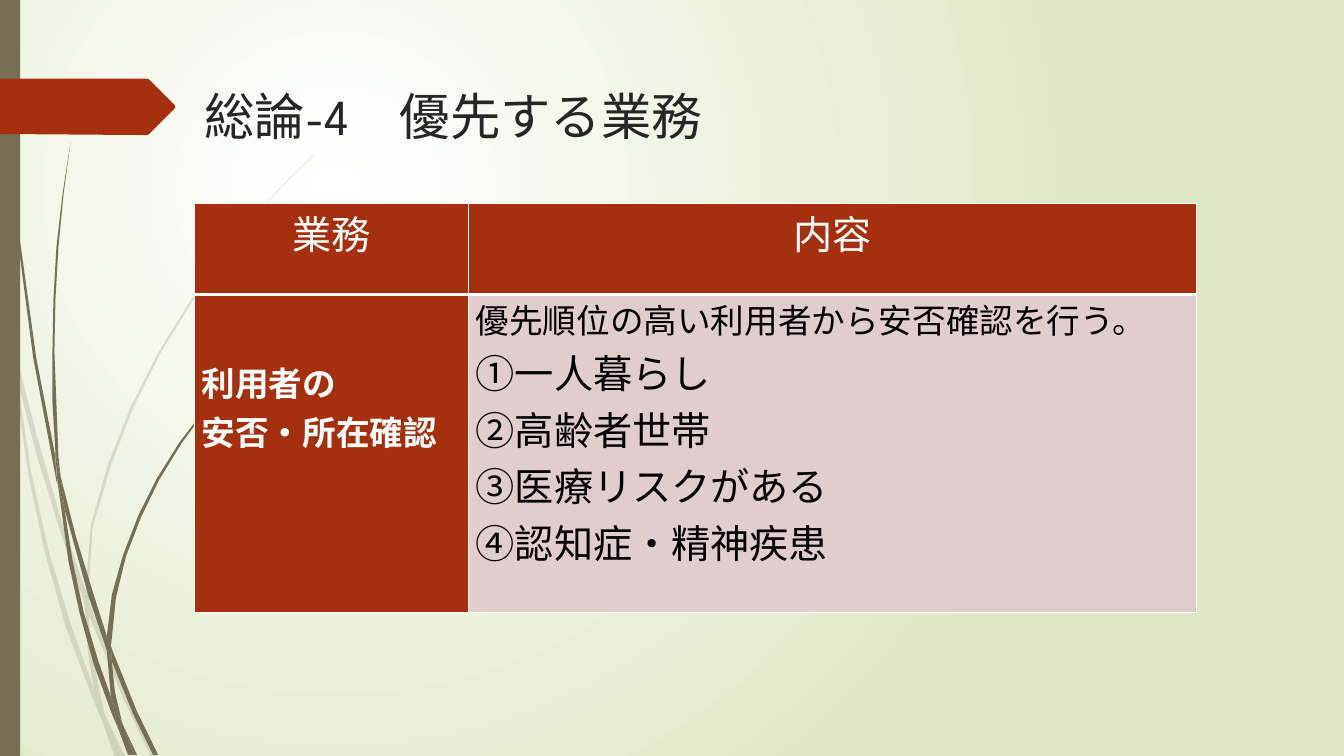
from pptx import Presentation
from pptx.dml.color import RGBColor as RGB
from pptx.enum.shapes import MSO_SHAPE as SHAPE
from pptx.enum.text import PP_ALIGN as ALIGN
from pptx.oxml import parse_xml as to_xml
from pptx.oxml.ns import nsdecls as ns, qn
from pptx.util import Pt
from lxml.etree import SubElement as Sub

WHITE = RGB(0xFF, 0xFF, 0xFF)
BLACK = RGB(0, 0, 0)
INK = RGB(0x26, 0x26, 0x26)
OLIVE = RGB(0x76, 0x6F, 0x54)
RUST = RGB(0xA5, 0x30, 0x10)
PINK = RGB(0xE1, 0xCD, 0xCC)
LIME = RGB(0xDF, 0xE8, 0xC4)
FONT = "League Spartan"
UNIT = Pt(0.72)

PALE = [
    [(11, 350), (9, 322), (0, 282), (0, 299), (10, 344)],
    [(58, 522), (84, 599), (85, 586), (62, 520), (37, 434), (14, 345),
     (17, 376), (36, 450)],
    [(92, 607), (88, 596), (88, 610), (123, 694), (150, 751), (155, 751),
     (127, 692)],
    [(119, 751), (124, 751), (105, 711)],
    [(93, 683), (70, 619), (48, 545), (31, 469), (17, 376), (11, 350),
     (28, 470), (44, 546), (65, 621), (92, 693), (101, 714), (99, 707)],
    [(84, 599), (87, 646), (93, 683), (96, 692), (105, 711), (103, 706),
     (91, 646), (88, 610), (88, 608)],
    [(88, 584), (92, 523), (110, 462), (132, 405), (160, 349), (193, 296),
     (229, 245), (268, 198), (290, 175), (312, 154), (312, 153), (289, 175),
     (268, 197), (228, 244), (191, 295), (158, 348), (130, 403), (107, 461),
     (90, 522), (85, 584), (85, 586), (88, 596)],
    [(101, 714), (114, 751), (119, 751)],
    [(88, 608), (88, 596), (85, 586), (84, 599)],
    [(96, 692), (93, 683), (99, 707), (101, 714), (119, 751), (105, 711)],
]
DARK = [
    [(7, 110), (17, 233), (33, 355), (56, 477), (57, 481), (55, 457),
     (55, 453), (36, 355), (19, 232), (8, 109), (5, 48), (4, 0), (3, 0),
     (4, 48)],
    [(88, 592), (106, 645), (106, 631), (93, 590), (75, 531), (60, 472),
     (64, 505)],
    [(113, 649), (110, 641), (111, 656), (132, 708), (152, 749), (157, 749),
     (136, 706)],
    [(110, 691), (98, 657), (83, 607), (72, 556), (64, 505), (57, 477),
     (68, 557), (79, 608), (93, 659), (111, 708), (117, 722), (116, 717)],
    [(60, 472), (58, 453), (54, 349), (55, 297), (58, 245), (63, 193),
     (70, 141), (62, 193), (56, 245), (53, 297), (52, 349), (52, 399),
     (55, 449)],
    [(133, 749), (136, 749), (122, 719)],
    [(57, 477), (64, 505), (60, 472), (55, 449), (55, 453)],
    [(111, 633), (115, 593), (125, 552), (140, 513), (158, 476), (180, 440),
     (205, 406), (231, 374), (261, 344), (260, 344), (231, 373), (204, 405),
     (178, 439), (156, 474), (137, 512), (122, 551), (111, 590), (106, 631),
     (110, 641)],
    [(117, 722), (127, 749), (131, 749)],
    [(106, 645), (110, 691), (116, 706), (122, 719), (121, 716), (114, 686),
     (111, 656), (109, 651)],
    [(106, 645), (109, 651), (111, 656), (110, 641), (106, 631)],
    [(116, 706), (110, 691), (116, 717), (117, 722), (130, 749), (133, 749),
     (122, 719)],
]
ARROW = [(0, 78), (146, 78), (148, 79), (173, 104), (174, 106), (173, 108),
         (148, 133), (146, 134), (136, 134), (0, 133)]

CELLS = [
    [("業務", 28, RUST, ALIGN.CENTER, 0),
     ("内容", 28, RUST, ALIGN.CENTER, 0)],
    [("利用者の\n安否・所在確認", 24, RUST, ALIGN.JUSTIFY, 45),
     ("優先順位の高い利用者から安否確認を行う。", 24, PINK, ALIGN.LEFT, 0)],
]
RISKS = ["①一人暮らし", "②高齢者世帯", "③医療リスクがある", "④認知症・精神疾患"]


def write(para, text, size, color=WHITE, bold=False, align=ALIGN.LEFT):
    para.alignment = align
    run = para.add_run()
    run.text = text
    font = run.font
    font.name, font.size, font.bold = FONT, Pt(size), bold
    font.color.rgb = color


def paint(shape, color, alpha=None):
    shape.shadow.inherit = False
    shape.fill.solid()
    shape.fill.fore_color.rgb = color
    shape.line.fill.background()
    if alpha:
        tint = shape.fill._xPr.find(".//" + qn("a:srgbClr"))
        Sub(tint, qn("a:alpha"), val=str(alpha * 1000))


def trace(shapes, points, color, alpha=None):
    pen = shapes.build_freeform(*points[0], scale=UNIT)
    pen.add_line_segments(points[1:], close=True)
    paint(pen.convert_to_shape(), color, alpha)


def backdrop(slide):
    slide._element.cSld.insert(0, to_xml(
        f'<p:bg {ns("p", "a")}><p:bgPr><a:gradFill rotWithShape="1"><a:gsLst>'
        f'<a:gs pos="0"><a:srgbClr val="{WHITE}"/></a:gs>'
        f'<a:gs pos="100000"><a:srgbClr val="{LIME}"/></a:gs></a:gsLst>'
        '<a:path path="circle"><a:fillToRect l="50000" t="50000" r="100000" '
        'b="100000"/></a:path></a:gradFill><a:effectLst/></p:bgPr></p:bg>'))


def edge(slide, x, y, w, h):
    for blades, alpha in ((PALE, 20), (DARK, None)):
        group = slide.shapes.add_group_shape()
        for blade in blades:
            trace(group.shapes, blade, OLIVE, alpha)
    bar = slide.shapes.add_shape(SHAPE.RECTANGLE, Pt(x), Pt(y), Pt(w), Pt(h))
    paint(bar, OLIVE)
    trace(slide.shapes, ARROW, RUST)


def title(slide, x, y, w, h):
    frame = slide.shapes.add_textbox(Pt(x), Pt(y), Pt(w), Pt(h)).text_frame
    frame.word_wrap = True
    write(frame.paragraphs[0], "総論-4\u3000優先する業務", 36, INK)


def border(cell, top, base):
    props = cell._tc.get_or_add_tcPr()
    for side, width in (("L", 1), ("R", 1), ("T", top), ("B", base)):
        line = Sub(props, qn("a:ln" + side), w=str(Pt(width)))
        fill = Sub(line, qn("a:solidFill"))
        Sub(fill, qn("a:srgbClr"), val=str(WHITE))


def duties(slide, x, y, w, h):
    table = slide.shapes.add_table(2, 2, Pt(x), Pt(y), Pt(w), Pt(h)).table
    table.first_row = table.horz_banding = False
    first, head = 195.84, 64.8
    for col, width in zip(table.columns, (first, w - first)):
        col.width = Pt(width)
    for row, height in zip(table.rows, (head, h - head)):
        row.height = Pt(height)
    for r, row in enumerate(CELLS):
        for c, (text, size, fill, align, top) in enumerate(row):
            cell = table.cell(r, c)
            cell.margin_left = cell.margin_right = Pt(5.04)
            cell.margin_top, cell.margin_bottom = Pt(top), 0
            border(cell, 3 if r else 1, 1 if r else 3)
            cell.fill.solid()
            cell.fill.fore_color.rgb = fill
            frame = cell.text_frame
            for i, line in enumerate(text.split("\n")):
                para = frame.add_paragraph() if i else frame.paragraphs[0]
                write(para, line, size, BLACK if fill == PINK else WHITE,
                      r == 1 and c == 0, align)
    para = table.cell(1, 1).text_frame.paragraphs[0]
    for risk in RISKS:
        para.add_line_break()
        write(para, risk, 28, BLACK)


def main():
    deck = Presentation()
    deck.slide_width, deck.slide_height = Pt(960), Pt(540)
    slide = deck.slides.add_slide(deck.slide_layouts[6])
    backdrop(slide)
    edge(slide, 0, 0, 14.4, 540)
    title(slide, 139, 57.6, 702, 100.8)
    duties(slide, 139, 145.5, 715.7, 292.3)
    deck.save("out.pptx")


if __name__ == "__main__":
    main()
